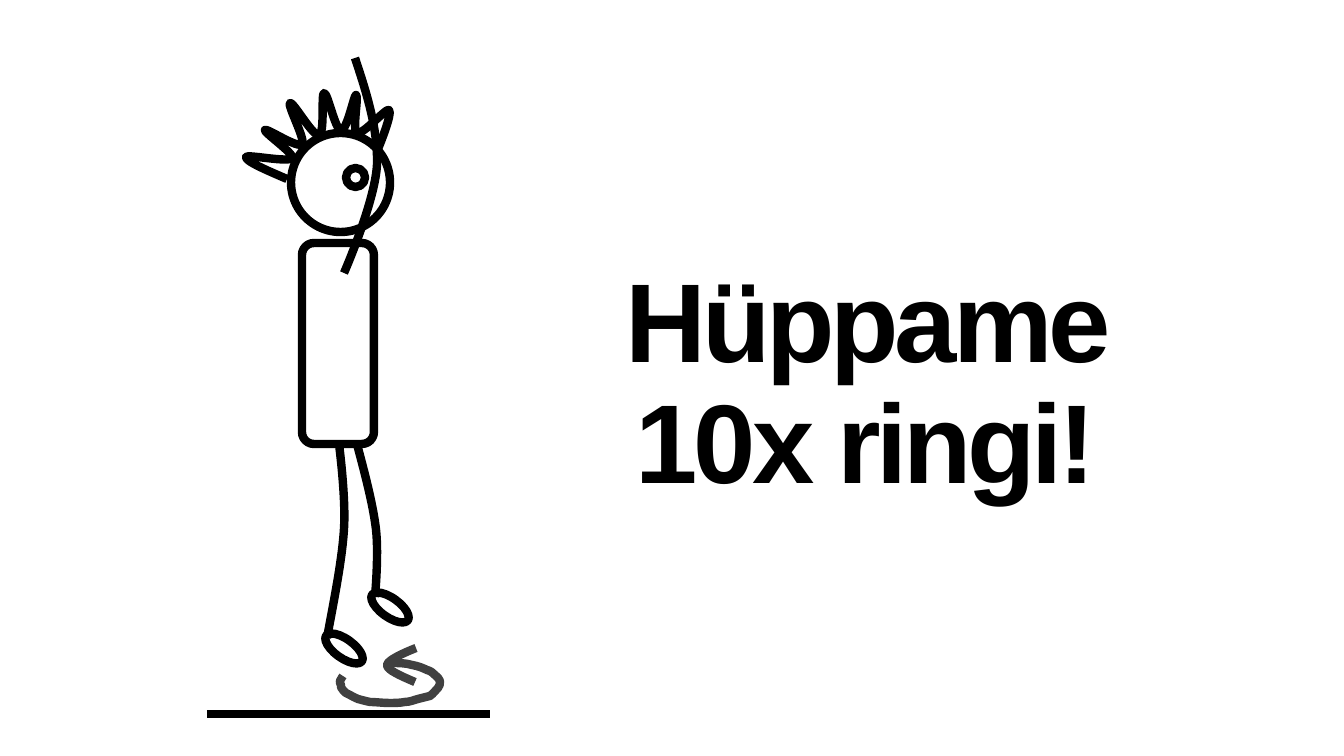
from lxml.etree import SubElement
from pptx import Presentation
from pptx.dml.color import RGBColor
from pptx.enum.shapes import MSO_CONNECTOR, MSO_SHAPE as SHP
from pptx.enum.text import MSO_ANCHOR, MSO_AUTO_SIZE, PP_ALIGN
from pptx.oxml.ns import qn
from pptx.util import Emu, Pt

PX = 914400 / 100.8
BLACK, GREY = "000000", "404040"

# Each curve is a start point followed by three points per Bézier segment.
RIGHT_LEG = [(357, 444), (365, 474), (373, 504), (376, 529),
             (379, 555), (375, 597), (375, 597)]
LEFT_LEG = [(339, 444), (339, 444), (346, 497), (344, 529),
            (342, 561), (334, 600), (327, 638)]
ARM = [(355, 58), (367, 94), (378, 129), (377, 165),
       (375, 202), (344, 273), (344, 273)]
HAIR = [(287, 179), (266, 170), (245, 161), (246, 157),
        (247, 154), (289, 163), (292, 158), (295, 154), (263, 132), (265, 130),
        (267, 128), (298, 149), (302, 144), (306, 140), (287, 105), (290, 103),
        (293, 101), (313, 137), (319, 135), (325, 134), (321, 94), (324, 93),
        (328, 93), (335, 130), (341, 130), (347, 131), (354, 95), (356, 95),
        (359, 96), (352, 130), (357, 133), (363, 135), (386, 108), (389, 110),
        (393, 113), (378, 149), (378, 149)]
TURN = [(390, 663), (398, 663), (406, 663), (412, 665),
        (418, 666), (423, 668), (427, 670), (431, 671), (433, 673), (435, 675),
        (438, 677), (439, 679), (440, 681), (440, 684), (440, 686), (438, 688),
        (436, 690), (433, 694), (430, 696), (426, 697), (422, 698), (418, 699),
        (414, 700), (410, 702), (405, 702), (400, 703), (395, 703), (389, 703),
        (383, 703), (375, 702), (370, 702), (365, 701), (362, 700), (358, 699),
        (355, 698), (352, 696), (350, 695), (347, 694), (344, 692), (343, 690),
        (341, 688), (341, 687), (341, 685), (340, 684), (340, 682), (340, 681),
        (341, 679), (343, 676), (343, 676)]
TURN_HEAD = [(415, 682), (401, 676), (387, 670), (387, 665),
             (387, 659), (416, 648), (416, 648)]


def px(n):
    return Emu(round(n * PX))


def rgb(color):
    return RGBColor.from_string(color)


class Sketch:
    """Draws stroked elements into one group on the slide."""

    def __init__(self, slide, weight=6):
        self.slide = slide
        self.weight = Pt(weight)
        self.group = slide.shapes.add_group_shape().shapes

    def stroke(self, s, color):
        s.line.color.rgb = rgb(color)
        s.line.width = self.weight

    def outline(self, kind, x, y, w, h, rotation=0, color=BLACK):
        s = self.group.add_shape(kind, px(x), px(y), px(w), px(h))
        s.rotation = rotation
        s.shadow.inherit = False
        s.fill.background()
        self.stroke(s, color)

    def line(self, x1, y1, x2, y2, color=BLACK):
        s = self.group.add_connector(MSO_CONNECTOR.STRAIGHT, px(x1), px(y1), px(x2), px(y2))
        self.stroke(s, color)
        SubElement(s._element.spPr, qn("a:effectLst"))

    def curve(self, points, color=BLACK):
        """Build an open freeform and join every three points into a Bézier segment."""
        fb = self.group.build_freeform(*points[0], scale=PX)
        fb.add_line_segments(points[1:], close=False)
        s = fb.convert_to_shape()
        path = next(s._element.iter(qn("a:path")))
        steps = path.findall(qn("a:lnTo"))
        for i in range(0, len(steps), 3):
            bezier = SubElement(path, qn("a:cubicBezTo"))
            for step in steps[i:i + 3]:
                bezier.append(step[0])
                path.remove(step)
        s.shadow.inherit = False
        s.fill.background()
        self.stroke(s, color)

    def title(self, text, x, y, w, h):
        s = self.slide.shapes.title
        s.left, s.top, s.width, s.height = map(px, (x, y, w, h))
        tf = s.text_frame
        frame = dict(word_wrap=True, auto_size=MSO_AUTO_SIZE.NONE,
                     vertical_anchor=MSO_ANCHOR.MIDDLE,
                     margin_left=px(13), margin_right=px(13),
                     margin_top=px(7), margin_bottom=px(7))
        for name, value in frame.items():
            setattr(tf, name, value)
        p = tf.paragraphs[0]
        p.alignment, p.line_spacing = PP_ALIGN.CENTER, 0.9
        r = p.add_run()
        r.text = text
        for name, value in dict(name="Arial", size=Pt(80), bold=True).items():
            setattr(r.font, name, value)
        r.font.color.rgb = rgb(BLACK)
        r._r.get_or_add_rPr().set("spc", "-300")


def main():
    prs = Presentation()
    prs.slide_width, prs.slide_height = px(1344), px(756)
    sketch = Sketch(prs.slides.add_slide(prs.slide_layouts[5]))
    sketch.title("Hüppame 10x ringi!", 552, 35, 628, 703)

    sketch.outline(SHP.ROUNDED_RECTANGLE, 302, 243, 72, 201)  # torso
    sketch.outline(SHP.OVAL, 291, 133, 99, 99)  # head
    sketch.outline(SHP.OVAL, 346, 168, 19, 19)  # eye
    for x, y in ((368, 598), (322, 639)):  # feet
        sketch.outline(SHP.OVAL, x, y, 44, 19, rotation=35.7)
    for limb in (RIGHT_LEG, HAIR, ARM, LEFT_LEG):
        sketch.curve(limb)
    sketch.line(207, 714, 490, 714)  # ground
    for arrow_part in (TURN, TURN_HEAD):
        sketch.curve(arrow_part, GREY)
    prs.save("out.pptx")


if __name__ == "__main__":
    main()
